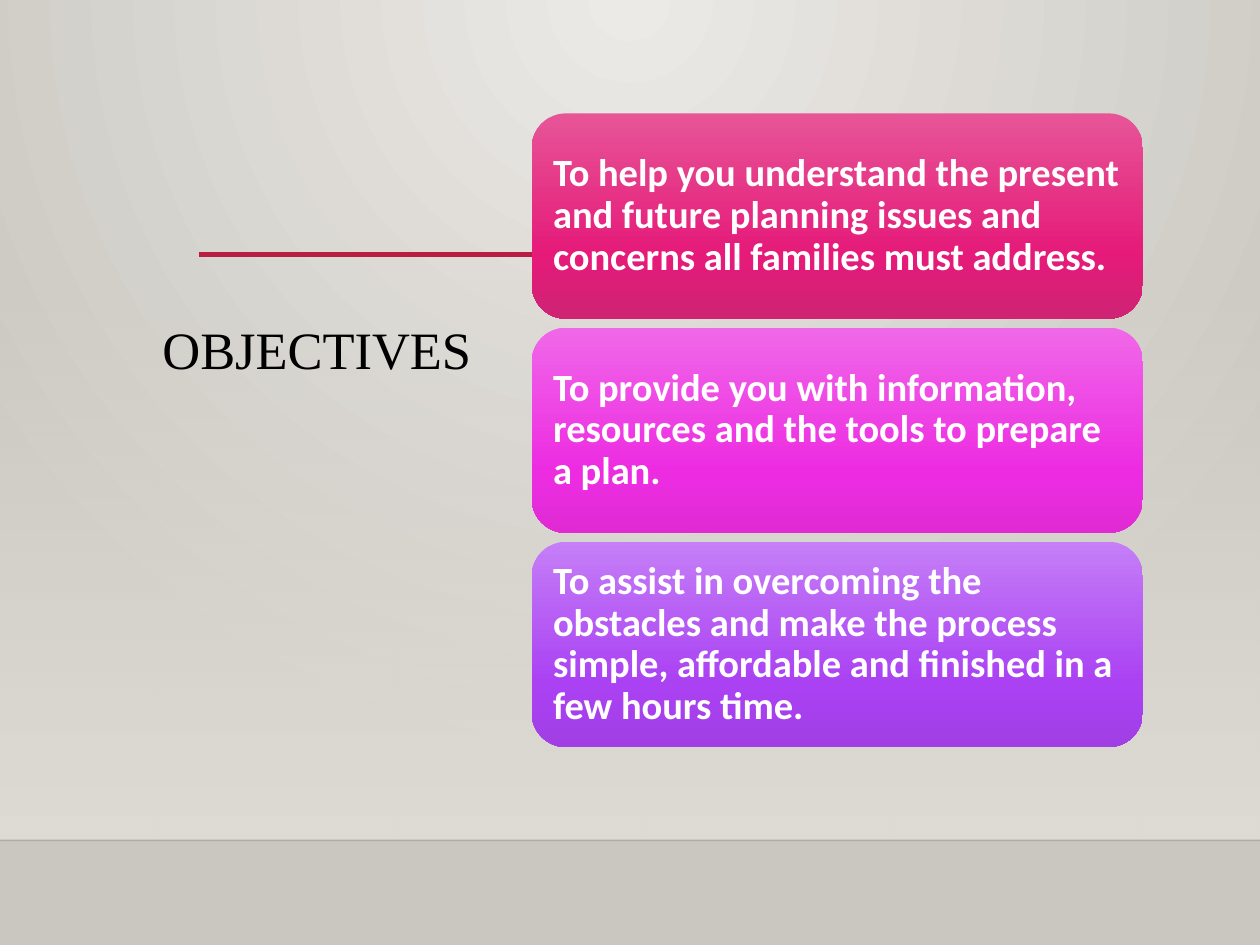
from lxml.etree import SubElement
from pptx import Presentation
from pptx.dml.color import RGBColor
from pptx.enum.shapes import MSO_CONNECTOR, MSO_SHAPE
from pptx.enum.text import MSO_ANCHOR, PP_ALIGN
from pptx.oxml import parse_xml
from pptx.oxml.ns import nsdecls, qn
from pptx.util import Inches, Pt

WIDTH, HEIGHT = 10, 7.5
TITLE = "OBJECTIVES"
# Text and gradient stops (position, colour, opacity), all in percent
OBJECTIVES = [
    ("To help you understand the present and future planning issues and "
     "concerns all families must address.",
     [(0, "E75597", 100), (69, "E51A79", 100), (100, "CF2374", 100)]),
    ("To provide you with information, resources and the tools to prepare a plan.",
     [(0, "F068E8", 100), (69, "ED2CE2", 100), (100, "E02BD5", 100)]),
    ("To assist in overcoming the obstacles and make the process simple, "
     "affordable and finished in a few hours time.",
     [(0, "C57FF7", 100), (69, "AA41F3", 100), (100, "A13FE5", 100)]),
]
BACKDROP = [(0, "ECEAE7", 100), (100, "CAC7C1", 100)]
WALL = [(0, "DFDBD5", 0), (100, "DFDBD5", 100)]
DOWNWARD = '<a:lin ang="5400000" scaled="0"/>'
FROM_TOP = '<a:path path="circle"><a:fillToRect l="43000" r="43000" b="100000"/></a:path>'

FLOOR = 6.67
WALL_TOP = 2.2
CARD_LEFT, CARD_TOP, CARD_WIDTH, CARD_HEIGHT = 4.22, 0.9, 4.85, 1.63
CARD_PITCH = 1.7


def color(value):
    return RGBColor.from_string(value)


def set_gradient(fill, owner, stops, direction):
    """Give the fill, held somewhere inside the owner element, these stops."""
    fill.gradient()
    stop_xml = "".join(
        f'<a:gs pos="{position * 1000}"><a:srgbClr val="{value}">'
        f'<a:alpha val="{opacity * 1000}"/></a:srgbClr></a:gs>'
        for position, value, opacity in stops)
    gradient = parse_xml(f'<a:gradFill {nsdecls("a")} rotWithShape="1">'
                         f'<a:gsLst>{stop_xml}</a:gsLst>{direction}</a:gradFill>')
    old = next(owner.iter(qn("a:gradFill")))
    old.getparent().replace(old, gradient)


def add_block(slide, kind, left, top, width, height, stops):
    block = slide.shapes.add_shape(
        kind, Inches(left), Inches(top), Inches(width), Inches(height))
    block.shadow.inherit = False
    block.line.fill.background()
    set_gradient(block.fill, block.element.spPr, stops, DOWNWARD)
    return block


def add_rule(slide, left, right, top, value, weight, opacity=100):
    rule = slide.shapes.add_connector(
        MSO_CONNECTOR.STRAIGHT, Inches(left), Inches(top), Inches(right), Inches(top))
    rule.line.color.rgb = color(value)
    rule.line.width = Pt(weight)
    properties = rule.element.spPr
    alpha = SubElement(next(properties.iter(qn("a:srgbClr"))), qn("a:alpha"))
    alpha.set("val", str(opacity * 1000))
    SubElement(properties, qn("a:effectLst"))


def write(frame, text, font_name, size, value, bold=False):
    frame.word_wrap = True
    paragraph = frame.paragraphs[0]
    paragraph.text = text
    paragraph.alignment = PP_ALIGN.LEFT
    paragraph.line_spacing = 0.9
    font = paragraph.runs[0].font
    font.name, font.size, font.bold = font_name, Pt(size), bold
    font.color.rgb = color(value)


def main():
    deck = Presentation()
    deck.slide_width, deck.slide_height = Inches(WIDTH), Inches(HEIGHT)
    slide = deck.slides.add_slide(deck.slide_layouts[6])
    set_gradient(slide.background.fill, slide.element, BACKDROP, FROM_TOP)

    add_block(slide, MSO_SHAPE.RECTANGLE, 0, WALL_TOP, WIDTH, FLOOR - WALL_TOP, WALL)
    add_rule(slide, 0, WIDTH, FLOOR, "000001", 1, opacity=20)
    add_rule(slide, 1.58, 8.77, 2.02, "B71E42", 2.5)

    title = slide.shapes.add_textbox(
        Inches(1.19), Inches(2.52), Inches(2.68), Inches(2.92))
    write(title.text_frame, TITLE, "Times New Roman", 30, "000000")

    for row, (text, stops) in enumerate(OBJECTIVES):
        card = add_block(slide, MSO_SHAPE.ROUNDED_RECTANGLE, CARD_LEFT,
                         CARD_TOP + row * CARD_PITCH, CARD_WIDTH, CARD_HEIGHT, stops)
        frame = card.text_frame
        frame.vertical_anchor = MSO_ANCHOR.MIDDLE
        frame.margin_left = frame.margin_right = Inches(0.09)
        frame.margin_top = frame.margin_bottom = Inches(0.09)
        write(frame, text, "Calibri", 22, "FFFFFF", bold=True)

    deck.save("out.pptx")


if __name__ == "__main__":
    main()
